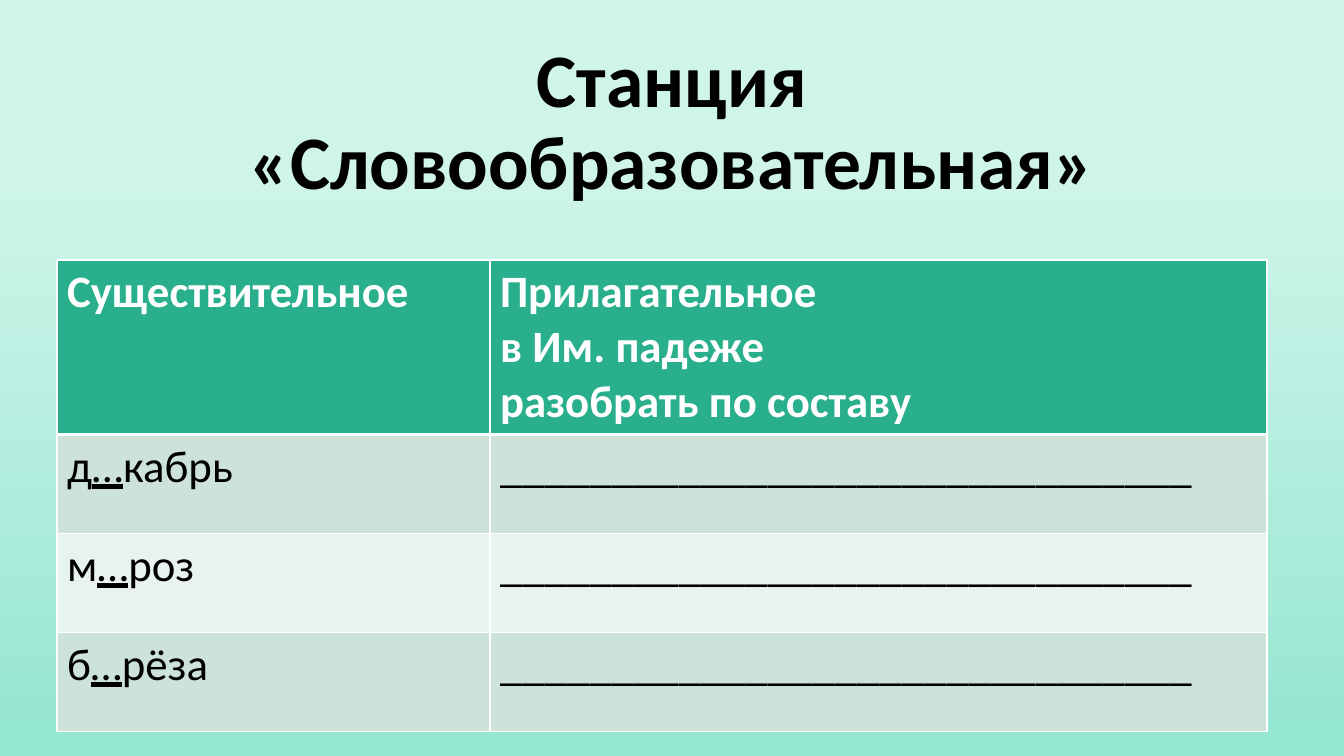
import pptx
import pptx.dml.color
import pptx.enum.text
import pptx.oxml
import pptx.oxml.ns
import pptx.util
from lxml import etree

EMU_PER_PX = 914400 / 100.8
FONT = "Calibri"
COLORS = {
    "ink": "000000",
    "white": "FFFFFF",
    "header": "29AF8C",
    "odd_row": "CDE3DA",
    "even_row": "E8F2EE",
    "mint_light": "CFF4EA",
    "mint_dark": "94E6D0",
}
GAP = "…"
ANSWER_LINE = "_" * 31
HEADINGS = ["Существительное", "Прилагательное\nв Им. падеже\nразобрать по составу"]
NOUNS = ["д…кабрь", "м…роз", "б…рёза"]


def px(length):
    return pptx.util.Emu(round(length * EMU_PER_PX))


def rgb(color):
    return pptx.dml.color.RGBColor.from_string(COLORS[color])


class SlideBuilder:
    def __init__(self, presentation):
        self.slide = presentation.slides.add_slide(presentation.slide_layouts[5])

    def background(self, stops):
        """Fill the background from top to bottom with (percent, color) stops."""
        fill = self.slide.background.fill
        fill.gradient()
        fill.gradient_angle = 270
        qn = pptx.oxml.ns.qn
        stop_list = next(self.slide.element.iter(qn("a:gsLst")))
        for old_stop in list(stop_list):
            stop_list.remove(old_stop)
        for percent, color in stops:
            stop = etree.SubElement(stop_list, qn("a:gs"), pos=str(percent * 1000))
            etree.SubElement(stop, qn("a:srgbClr"), val=COLORS[color])

    def style_run(self, run, size, color, bold):
        run.font.name = FONT
        run.font.size = pptx.util.Pt(size)
        run.font.bold = bold
        run.font.color.rgb = rgb(color)

    def title(self, text, left, top, width, height):
        heading = self.slide.shapes.title
        heading.left, heading.top = px(left), px(top)
        heading.width, heading.height = px(width), px(height)
        frame = heading.text_frame
        frame.text = text
        frame.word_wrap = True
        frame.auto_size = pptx.enum.text.MSO_AUTO_SIZE.NONE
        frame.vertical_anchor = pptx.enum.text.MSO_ANCHOR.BOTTOM
        paragraph = frame.paragraphs[0]
        paragraph.alignment = pptx.enum.text.PP_ALIGN.CENTER
        paragraph.line_spacing = 0.9
        self.style_run(paragraph.runs[0], 54, "ink", True)

    def table(self, left, top, widths, heights):
        grid = self.slide.shapes.add_table(
            len(heights), len(widths), px(left), px(top), px(sum(widths)), px(sum(heights))
        ).table
        for column, width in zip(grid.columns, widths):
            column.width = px(width)
        for row, height in zip(grid.rows, heights):
            row.height = px(height)
        return grid

    def cell(self, cell, text, fill, color="ink", bold=False, top=1, bottom=1):
        """Fill a cell; the gap letter in its text is underlined."""
        cell.text_frame.text = "" if GAP in text else text
        if GAP in text:
            before, after = text.split(GAP)
            for part in (before, GAP, after):
                run = cell.text_frame.paragraphs[0].add_run()
                run.text = part
                run.font.underline = part == GAP
        for paragraph in cell.text_frame.paragraphs:
            for run in paragraph.runs:
                self.style_run(run, 32, color, bold)
        cell.fill.solid()
        cell.fill.fore_color.rgb = rgb(fill)
        self.borders(cell, {"L": 1, "R": 1, "T": top, "B": bottom})

    def borders(self, cell, widths):
        properties = cell._tc.get_or_add_tcPr()
        for position, (side, width) in enumerate(widths.items()):
            properties.insert(position, pptx.oxml.parse_xml(
                f'<a:ln{side} {pptx.oxml.ns.nsdecls("a")} w="{pptx.util.Pt(width)}">'
                f'<a:solidFill><a:srgbClr val="{COLORS["white"]}"/></a:solidFill></a:ln{side}>'
            ))


def main():
    presentation = pptx.Presentation()
    presentation.slide_width, presentation.slide_height = px(1344), px(756)
    builder = SlideBuilder(presentation)
    builder.background([(0, "mint_light"), (23, "mint_light"), (100, "mint_dark")])
    builder.title("Станция «Словообразовательная»", 168, 60, 1008, 151)

    exercise = builder.table(57, 260, [433, 777], [173] + [99] * len(NOUNS))
    for column, heading in enumerate(HEADINGS):
        builder.cell(exercise.cell(0, column), heading, "header", "white", True, bottom=3)
    for row, noun in enumerate(NOUNS, start=1):
        fill = "odd_row" if row % 2 else "even_row"
        for column, text in enumerate((noun, ANSWER_LINE)):
            builder.cell(exercise.cell(row, column), text, fill, top=3 if row == 1 else 1)

    presentation.save("out.pptx")


if __name__ == "__main__":
    main()
